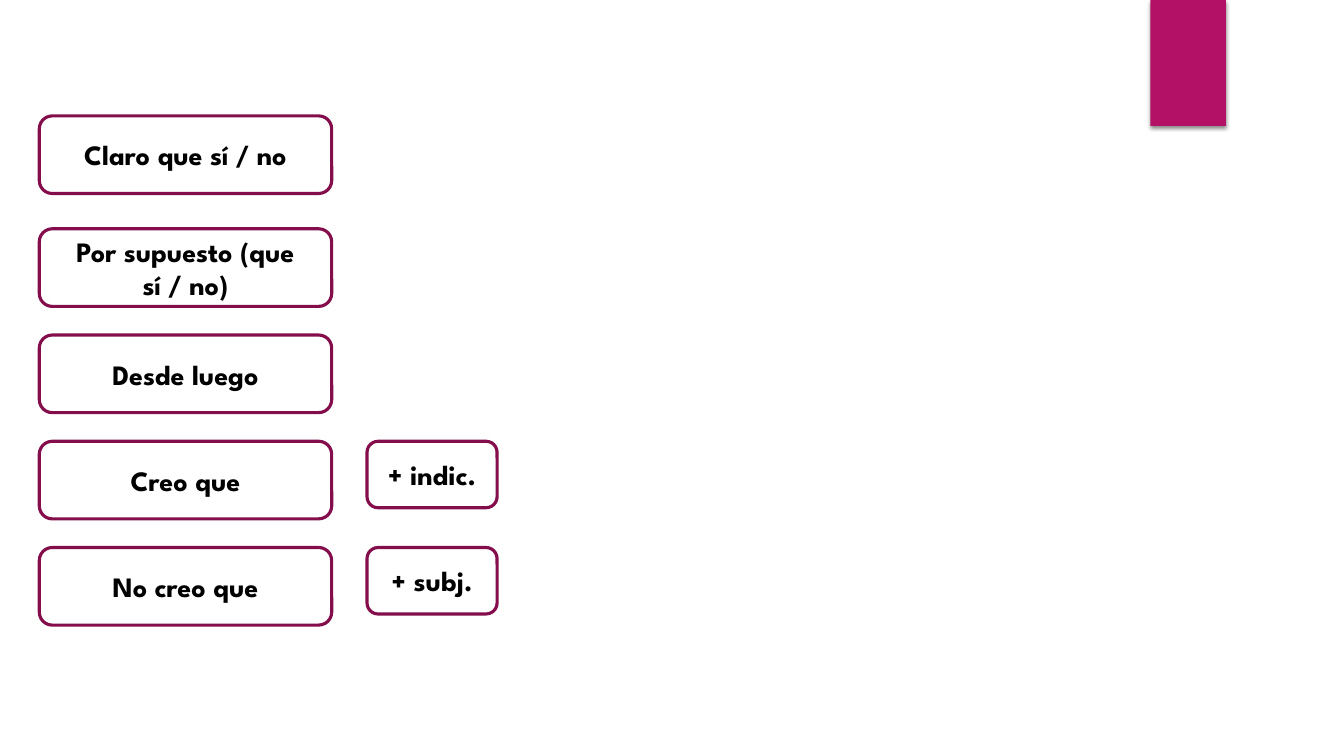
from lxml.etree import SubElement
from pptx import Presentation
from pptx.dml.color import RGBColor
from pptx.enum.shapes import MSO_SHAPE as Preset
from pptx.enum.text import MSO_ANCHOR as Anchor, PP_ALIGN as Align
from pptx.oxml.ns import qn
from pptx.util import Inches, Pt

ROWS = [
    ("Claro que sí / no", None),
    ("Por supuesto (que sí / no)", None),
    ("Desde luego", None),
    ("Creo que", "+ indic."),
    ("No creo que", "+ subj."),
]
COLORS = {"tab": "B31166", "border": "840D4B", "box": "FFFFFF",
          "text": "000000", "shadow": "000000"}
FONT = "League Spartan"

SLIDE_SIZE = (13.33, 7.5)
TAB = (11.41, 0, 0.75, 1.25)
PHRASE_LEFT, PHRASE_SIZE = 0.39, (2.9, 0.77)
MOOD_LEFT, MOOD_SIZE = 3.64, (1.29, 0.66)
FIRST_TOP, SECOND_TOP, ROW_STEP = 1.15, 2.27, 1.054


def color(name):
    return RGBColor.from_string(COLORS[name])


def add_filled(slide, preset, box, fill):
    shape = slide.shapes.add_shape(preset, *(Inches(length) for length in box))
    shape.shadow.inherit = False
    shape.fill.solid()
    shape.fill.fore_color.rgb = color(fill)
    shape.line.fill.background()
    return shape


def add_shadow(shape, blur, distance, angle, opacity):
    effects = shape._element.spPr.find(qn("a:effectLst"))
    shadow = SubElement(effects, qn("a:outerShdw"), blurRad=str(Pt(blur)),
                        dist=str(Pt(distance)), dir=str(angle * 60000),
                        rotWithShape="0")
    tint = SubElement(shadow, qn("a:srgbClr"), val=COLORS["shadow"])
    SubElement(tint, qn("a:alpha"), val=str(opacity * 1000))


def write(shape, text, size=20, bold=True, align=Align.CENTER, anchor=Anchor.MIDDLE):
    frame = shape.text_frame
    frame.word_wrap = True
    frame.vertical_anchor = anchor
    paragraph = frame.paragraphs[0]
    paragraph.alignment = align
    run = paragraph.add_run()
    run.text = text
    run.font.name = FONT
    run.font.size = Pt(size)
    run.font.bold = bold
    run.font.color.rgb = color("text")


def add_label(slide, text, left, top, size):
    shape = add_filled(slide, Preset.ROUNDED_RECTANGLE, (left, top, *size), "box")
    shape.line.color.rgb = color("border")
    shape.line.width = Pt(2.25)
    write(shape, text)


def main():
    presentation = Presentation()
    presentation.slide_width, presentation.slide_height = map(Inches, SLIDE_SIZE)
    slide = presentation.slides.add_slide(presentation.slide_layouts[6])

    tab = add_filled(slide, Preset.RECTANGLE, TAB, "tab")
    add_shadow(tab, blur=3, distance=2, angle=90, opacity=45)

    for index, (phrase, mood) in enumerate(ROWS):
        top = SECOND_TOP + (index - 1) * ROW_STEP if index else FIRST_TOP
        add_label(slide, phrase, PHRASE_LEFT, top, PHRASE_SIZE)
        if mood:
            add_label(slide, mood, MOOD_LEFT, top, MOOD_SIZE)

    presentation.save("out.pptx")


if __name__ == "__main__":
    main()
